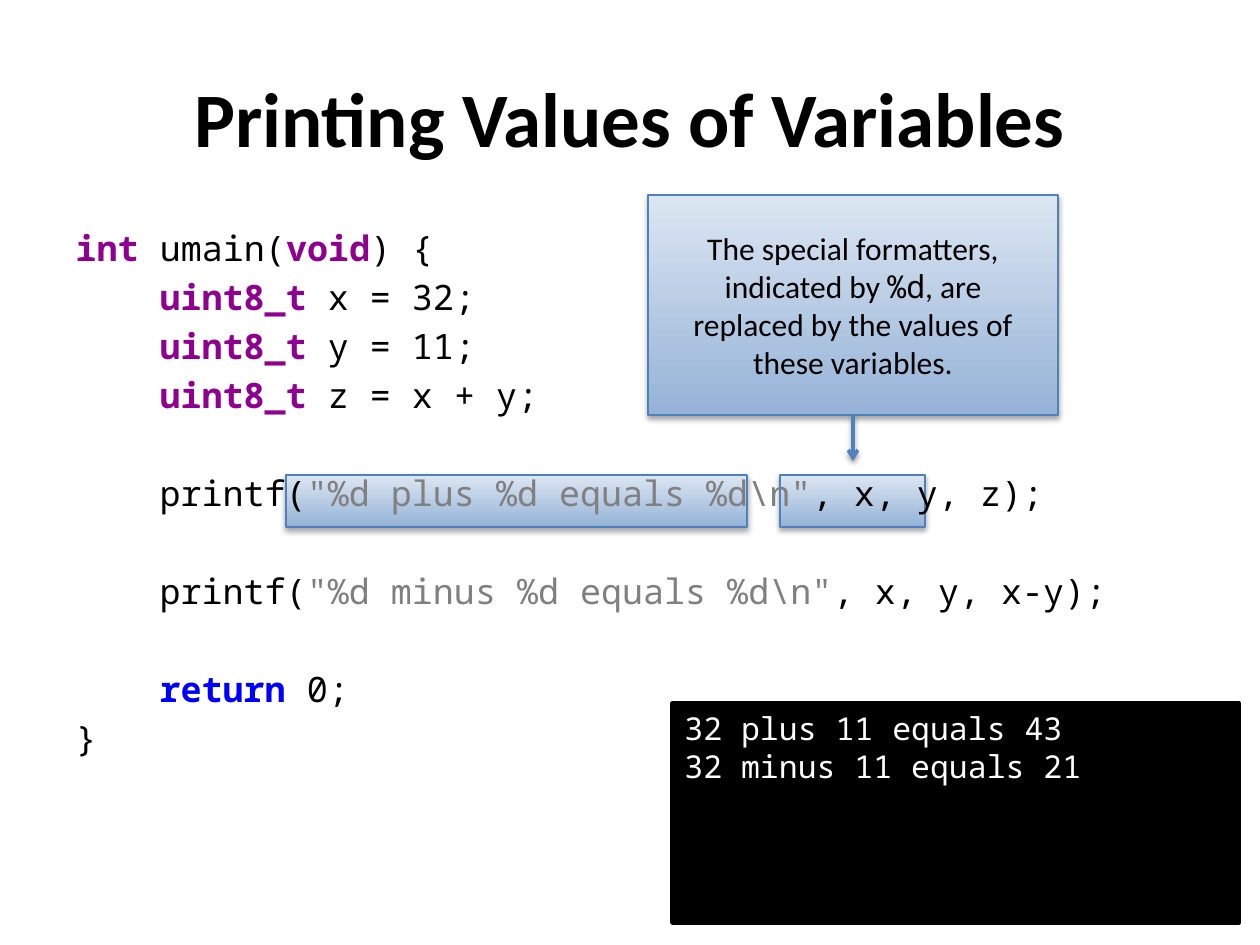
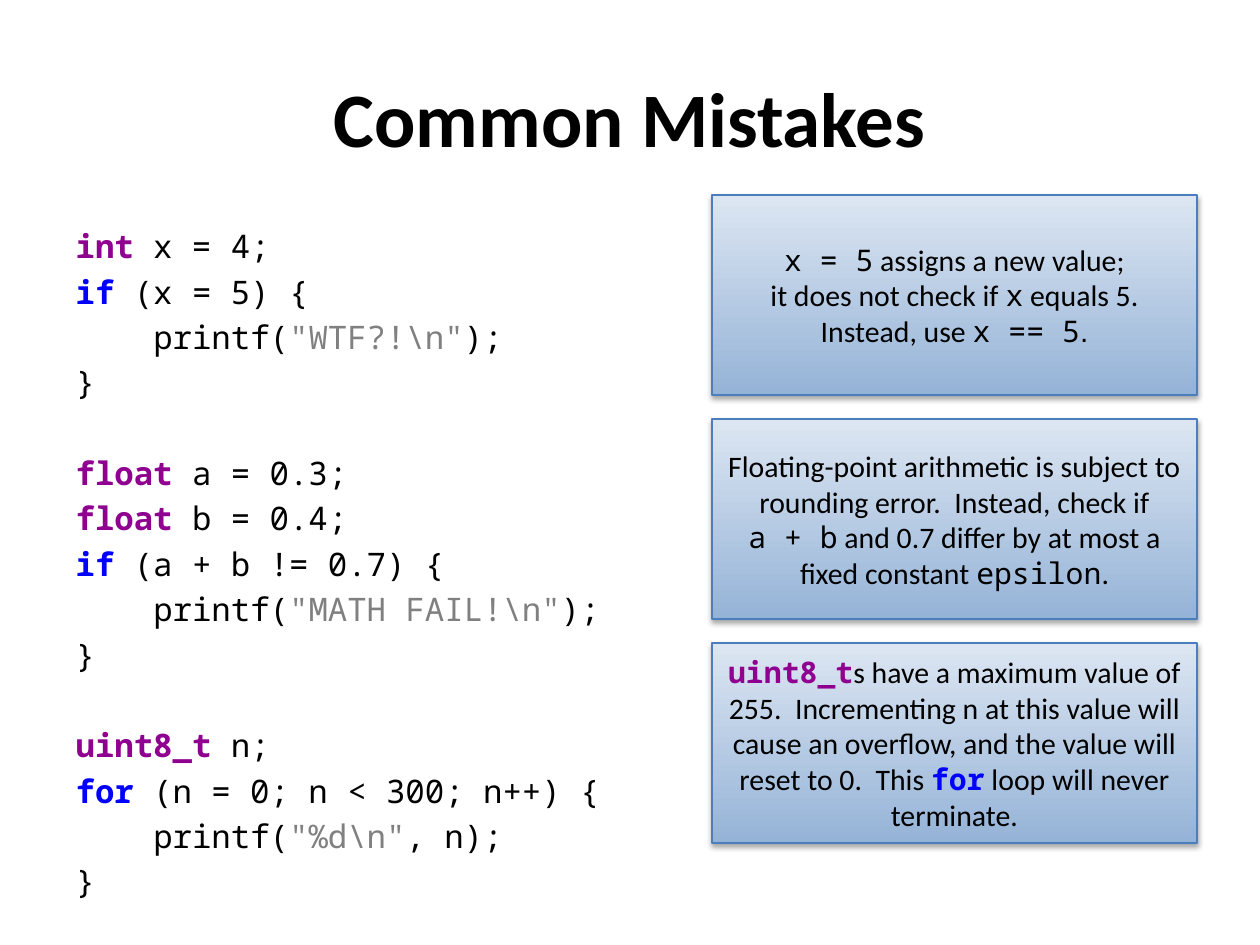
"""Build two slides on printing variables and common mistakes in C."""
from lxml.etree import SubElement
from pptx import Presentation
from pptx.dml.color import RGBColor
from pptx.enum.shapes import MSO_CONNECTOR, MSO_SHAPE
from pptx.enum.text import MSO_ANCHOR, MSO_AUTO_SIZE, PP_ALIGN
from pptx.oxml import parse_xml
from pptx.oxml.ns import nsdecls, qn
from pptx.util import Emu, Pt

SCALE = 914400 / 126
COLORS = {
    "black": "000000",
    "white": "FFFFFF",
    "type": "900090",
    "keyword": "0000FF",
    "string": "808080",
    "panel_dark": "95B3D7",
    "panel_light": "DCE6F2",
    "accent": "4F81BD",
    "mistake_edge": "4B7EBC",
}
MONO = "Noto Sans Mono"
STYLES = {
    "title": {"name": "Calibri", "bold": True, "color": "black"},
    "prose": {"name": "Calibri", "bold": False, "color": "black"},
    "stop": {"name": "Arial", "bold": False, "color": "black"},
    "code": {"name": MONO, "bold": False, "color": "black"},
    "type": {"name": MONO, "bold": True, "color": "type"},
    "keyword": {"name": MONO, "bold": True, "color": "keyword"},
    "string": {"name": MONO, "bold": False, "color": "string"},
    "output": {"name": MONO, "bold": False, "color": "white"},
}
GAP = None
CLOSE = (0, [("code", "}")])

VARIABLES_CODE = [
    (0, [("type", "int "), ("code", "umain("), ("type", "void"), ("code", ") {")]),
    *[
        (1, [("type", "uint8_t "), ("code", statement)])
        for statement in ("x = 32;", "y = 11;", "z = x + y;")
    ],
    GAP,
    (1, [("code", "printf("), ("string", r'"%d plus %d equals %d\n"'), ("code", ", x, y, z);")]),
    GAP,
    (1, [("code", "printf("), ("string", r'"%d minus %d equals %d\n"'), ("code", ", x, y, x-y);")]),
    GAP,
    (1, [("keyword", "return "), ("code", "0;")]),
    CLOSE,
]
MISTAKES_CODE = [
    (0, [("type", "int"), ("code", " x = 4;")]),
    (0, [("keyword", "if"), ("code", " (x = 5) {")]),
    (1, [("code", "printf("), ("string", r'"WTF?!\n"'), ("code", ");")]),
    CLOSE,
    GAP,
    (0, [("type", "float "), ("code", "a = 0.3;")]),
    (0, [("type", "float "), ("code", "b = 0.4;")]),
    (0, [("keyword", "if"), ("code", " (a + b != 0.7) {")]),
    (1, [("code", "printf("), ("string", r'"MATH FAIL!\n"'), ("code", ");")]),
    CLOSE,
    GAP,
    (0, [("type", "uint8_t "), ("code", "n;")]),
    (0, [("keyword", "for"), ("code", " (n = 0; n < 300; n++) {")]),
    (1, [("code", "printf("), ("string", r'"%d\n"'), ("code", ", n);")]),
    CLOSE,
]
OUTPUT = [
    [("output", "32 plus 11 equals 43")],
    [("output", "32 minus 11 equals 21")],
]
FORMATTERS_NOTE = [
    [
        ("prose", "The special formatters, indicated by "),
        ("code", "%d"),
        ("prose", ", are\nreplaced by the values of these variables."),
    ]
]
MISTAKE_NOTES = [
    [
        [
            ("code", "x = 5"),
            ("prose", " assigns a new value;\nit does not check if "),
            ("code", "x"),
            ("prose", " equals 5."),
        ],
        [("prose", "Instead, use "), ("code", "x == 5"), ("stop", ".")],
    ],
    [
        [
            ("prose", "Floating-point arithmetic is subject to rounding error.  Instead, check if\n"),
            ("code", "a + b"),
            ("prose", " and 0.7 differ by at most a fixed constant "),
            ("code", "epsilon"),
            ("prose", "."),
        ]
    ],
    [
        [
            ("type", "uint8_t"),
            ("prose", "s have a maximum value of 255.  Incrementing n at this value will "
                      "cause an overflow, and the value will reset to 0.  This "),
            ("keyword", "for"),
            ("prose", " loop will never terminate."),
        ]
    ],
]


def px(length):
    """Turn pixels into EMU."""
    return Emu(round(length * SCALE))


def rgb(name):
    """Look up a named colour."""
    return RGBColor.from_string(COLORS[name])


def place(item, area):
    """Move and size an item to a left, top, width, height area."""
    for attribute, length in zip(("left", "top", "width", "height"), area):
        setattr(item, attribute, px(length))


def write_spans(para, spans, size):
    """Fill a paragraph with styled spans, breaking lines at newlines."""
    for style, text in spans:
        for index, piece in enumerate(text.split("\n")):
            if index:
                para.add_line_break()
            if not piece:
                continue
            span = para.add_run()
            span.text = piece
            values = {**STYLES[style], "size": Pt(size)}
            span.font.color.rgb = rgb(values.pop("color"))
            for attribute, value in values.items():
                setattr(span.font, attribute, value)


def next_para(frame, index):
    """Return the first paragraph or append another one."""
    return frame.add_paragraph() if index else frame.paragraphs[0]


def cast_shadow(item, opacity, distance):
    """Give an item a soft shadow falling straight down."""
    item.element.spPr.append(parse_xml(
        f'<a:effectLst {nsdecls("a")}><a:outerShdw blurRad="40000" dist="{distance}" '
        f'dir="5400000" rotWithShape="0"><a:srgbClr val="{COLORS["black"]}">'
        f'<a:alpha val="{opacity * 1000}"/></a:srgbClr></a:outerShdw></a:effectLst>'
    ))


def add_page(deck, title):
    """Add a slide with its title."""
    page = deck.slides.add_slide(deck.slide_layouts[1])
    heading = page.shapes.title
    place(heading, (63, 38, 1134, 157))
    frame = heading.text_frame
    frame.vertical_anchor = MSO_ANCHOR.MIDDLE
    frame.paragraphs[0].alignment = PP_ALIGN.CENTER
    write_spans(frame.paragraphs[0], [("title", title)], 44)
    return page


def add_code(page, lines, size):
    """Write the listing into the body placeholder, above earlier shapes."""
    body = page.placeholders[1]
    place(body, (63, 220, 1134, 624))
    body.element.getparent().append(body.element)
    frame = body.text_frame
    frame.auto_size = MSO_AUTO_SIZE.NONE
    after_gap = False
    for index, line in enumerate(lines):
        if line is GAP:
            after_gap = True
            continue
        depth, spans = line
        para = next_para(frame, index)
        if after_gap:
            para.space_before = Pt(round(size * 1.6, 1))
            after_gap = False
        properties = para._p.get_or_add_pPr()
        for name, value in {"marL": Pt(depth * size * 2.4), "indent": 0}.items():
            properties.set(name, str(value))
        SubElement(properties, qn("a:buNone"))
        write_spans(para, spans, size)


def add_box(page, area, edge, weight):
    """Add a rectangle with an outline."""
    box = page.shapes.add_shape(MSO_SHAPE.RECTANGLE, *map(px, area))
    box.line.color.rgb = rgb(edge)
    box.line.width = Pt(weight)
    return box


def write_box(box, paragraphs, size, alignment, anchor):
    """Write paragraphs of spans into a box."""
    frame = box.text_frame
    for attribute, value in {"word_wrap": True, "vertical_anchor": anchor}.items():
        setattr(frame, attribute, value)
    for index, spans in enumerate(paragraphs):
        para = next_para(frame, index)
        para.alignment = alignment
        write_spans(para, spans, size)


def add_panel(page, area, edge="accent"):
    """Add a blue gradient rectangle with a shadow."""
    panel = add_box(page, area, edge, 0.75)
    panel.fill.gradient()
    panel.fill.gradient_angle = 90
    for stop, color in zip(panel.fill.gradient_stops, ("panel_dark", "panel_light")):
        stop.color.rgb = rgb(color)
    cast_shadow(panel, 35, 23000)
    return panel


def add_note(page, area, paragraphs, size, edge="accent"):
    """Add a panel with centred text."""
    note = add_panel(page, area, edge)
    write_box(note, paragraphs, size, PP_ALIGN.CENTER, MSO_ANCHOR.MIDDLE)
    return note


def add_terminal(page, area, paragraphs):
    """Add a black box with program output."""
    terminal = add_box(page, area, "black", 2)
    terminal.fill.solid()
    terminal.fill.fore_color.rgb = rgb("black")
    terminal.shadow.inherit = False
    write_box(terminal, paragraphs, 18, PP_ALIGN.LEFT, MSO_ANCHOR.TOP)


def add_arrow_below(page, note, length):
    """Add an arrow pointing down from the bottom of a note."""
    middle, bottom = note.left + note.width // 2, note.top + note.height
    arrow = page.shapes.add_connector(
        MSO_CONNECTOR.STRAIGHT, middle, bottom, middle, bottom + px(length)
    )
    arrow.begin_connect(note, 2)
    arrow.line.color.rgb = rgb("accent")
    arrow.line.width = Pt(2)
    SubElement(arrow.element.spPr.find(qn("a:ln")), qn("a:tailEnd"), type="arrow")
    cast_shadow(arrow, 38, 20000)


def build_variables_page(deck):
    """Build the slide on printing values."""
    page = add_page(deck, "Printing Values of Variables")
    add_terminal(page, (672, 703, 567, 220), OUTPUT)
    for left, width in ((286, 461), (780, 145)):
        add_panel(page, (left, 475, width, 52))
    add_code(page, VARIABLES_CODE, 20)
    note = add_note(page, (648, 195, 410, 220), FORMATTERS_NOTE, 18)
    add_arrow_below(page, note, 46)


def build_mistakes_page(deck):
    """Build the slide on common mistakes."""
    page = add_page(deck, "Common Mistakes")
    add_code(page, MISTAKES_CODE, 18.5)
    for row, paragraphs in enumerate(MISTAKE_NOTES):
        add_note(page, (712, 195 + row * 224, 485, 200), paragraphs, 17, "mistake_edge")


def main():
    """Build and save the deck."""
    deck = Presentation()
    deck.slide_width, deck.slide_height = px(1260), px(945)
    build_variables_page(deck)
    build_mistakes_page(deck)
    deck.save("out.pptx")


if __name__ == "__main__":
    main()
